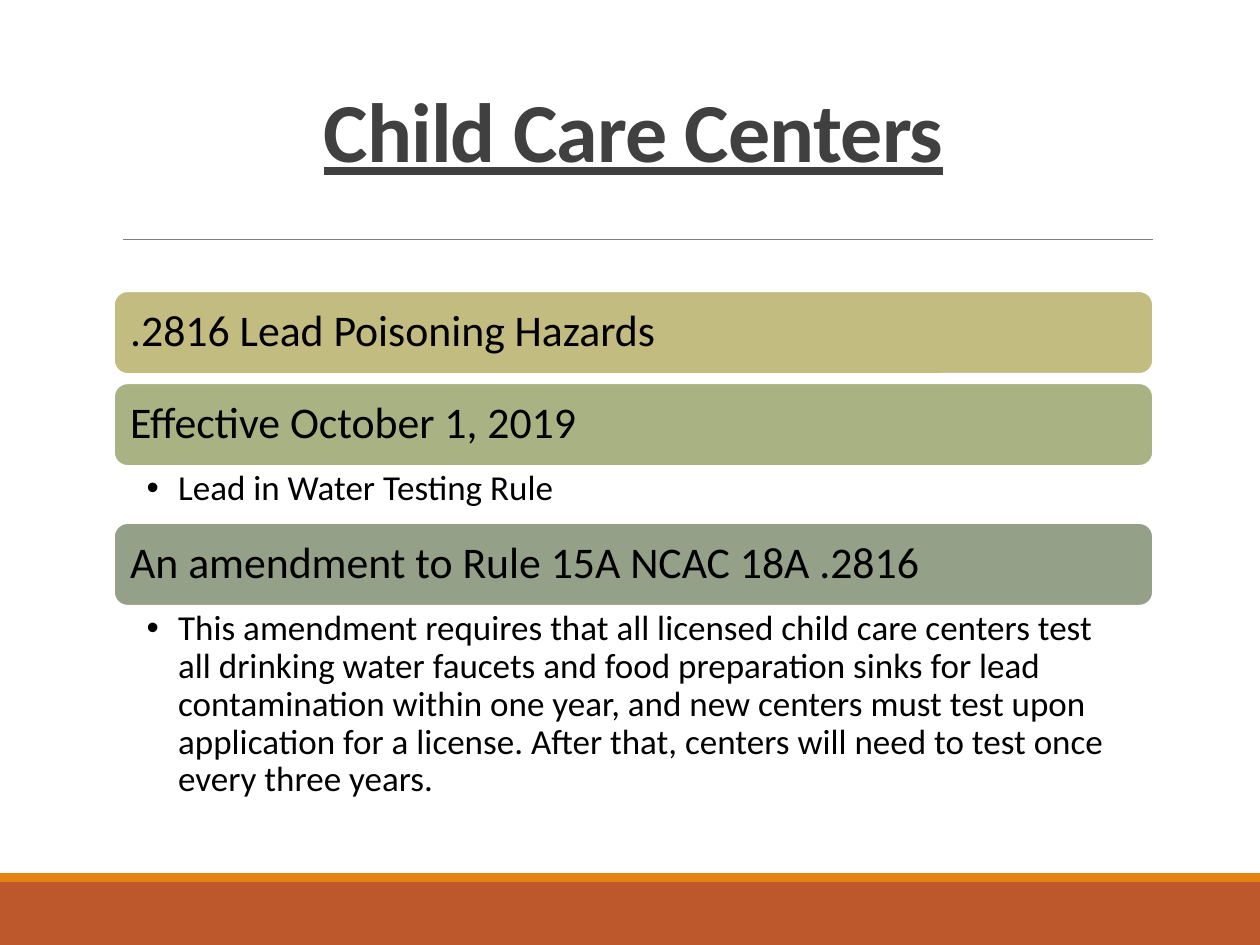
from lxml import etree
from pptx import Presentation
from pptx.dml.color import RGBColor
from pptx.enum import shapes, text
from pptx.oxml import ns
from pptx.util import Pt

WHITE = RGBColor(0xFF, 0xFF, 0xFF)
BLACK = RGBColor(0, 0, 0)
DARK = RGBColor(0x40, 0x40, 0x40)
GRAY = RGBColor(0x80, 0x80, 0x80)
RUST = RGBColor(0xBD, 0x58, 0x2C)
ORANGE = RGBColor(0xE4, 0x83, 0x12)
SAND = RGBColor(0xC2, 0xBC, 0x80)
OLIVE = RGBColor(0xA8, 0xB2, 0x83)
SAGE = RGBColor(0x94, 0xA0, 0x88)

WIDTH, HEIGHT = 720, 540
LEFT, CONTENT_W = 65, 594
BAR_H, GAP = 47.5, 5.1
FIRST_BAR = 166.3

# heading, colour, bullet, height below the bar
SECTIONS = [
    (".2816 Lead Poisoning Hazards", SAND, None, GAP),
    ("Effective October 1, 2019", OLIVE, "Lead in Water Testing Rule", 32.4),
    ("An amendment to Rule 15A NCAC 18A .2816", SAGE,
     "This amendment requires that all licensed child care centers test all "
     "drinking water faucets and food preparation sinks for lead contamination "
     "within one year, and new centers must test upon application for a license. "
     "After that, centers will need to test once every three years.", 116),
]


class Deck:
    font = "Calibri"

    def __init__(self, prs):
        self.s = prs.slides.add_slide(prs.slide_layouts[5])

    def add_text(self, tf, words, size, color, align, spacing):
        p = tf.paragraphs[0]
        p.alignment, p.line_spacing = align, spacing
        r = p.add_run()
        r.text = words
        r.font.name, r.font.size = self.font, Pt(size)
        r.font.color.rgb = color
        return p, r

    def frame(self, sp, anchor, left, top, right, bottom):
        """Set wrapping, anchor and margins, and return the text frame."""
        tf = sp.text_frame
        tf.word_wrap, tf.auto_size = True, text.MSO_AUTO_SIZE.NONE
        tf.vertical_anchor = anchor
        tf.margin_left, tf.margin_top = Pt(left), Pt(top)
        tf.margin_right, tf.margin_bottom = Pt(right), Pt(bottom)
        return tf

    def title(self, words, x, y, w, h):
        sp = self.s.shapes.title
        sp.left, sp.top, sp.width, sp.height = Pt(x), Pt(y), Pt(w), Pt(h)
        tf = self.frame(sp, text.MSO_ANCHOR.BOTTOM, 7.2, 3.6, 7.2, 3.6)
        _, r = self.add_text(tf, words, 48, DARK, text.PP_ALIGN.CENTER, 0.85)
        r.font.bold = r.font.underline = True
        r._r.get_or_add_rPr().set("spc", "-50")

    def block(self, kind, fill, x, y, w, h):
        sp = self.s.shapes.add_shape(kind, Pt(x), Pt(y), Pt(w), Pt(h))
        sp.shadow.inherit = False
        sp.fill.solid()
        sp.fill.fore_color.rgb = fill
        sp.line.fill.background()
        return sp

    def rule(self, x1, x2, y):
        c = self.s.shapes.add_connector(
            shapes.MSO_CONNECTOR.STRAIGHT, Pt(x1), Pt(y), Pt(x2), Pt(y))
        c.line.color.rgb, c.line.width = GRAY, Pt(0.5)
        etree.SubElement(c._element.spPr, ns.qn("a:effectLst"))

    def bar(self, words, fill, y):
        sp = self.block(shapes.MSO_SHAPE.ROUNDED_RECTANGLE, fill,
                        LEFT, y, CONTENT_W, BAR_H)
        sp.line.color.rgb, sp.line.width = WHITE, Pt(1.25)
        tf = self.frame(sp, text.MSO_ANCHOR.MIDDLE, 7.2, 7.2, 7.2, 7.2)
        self.add_text(tf, words, 25, BLACK, text.PP_ALIGN.LEFT, 0.9)

    def bullet(self, words, y, h):
        sp = self.s.shapes.add_textbox(Pt(LEFT), Pt(y), Pt(CONTENT_W), Pt(h))
        tf = self.frame(sp, text.MSO_ANCHOR.TOP, 18.8, 2.5, 14, 2.5)
        p, _ = self.add_text(tf, words, 20, BLACK, text.PP_ALIGN.LEFT, 0.9)
        pPr = p._p.get_or_add_pPr()
        pPr.set("marL", str(Pt(18)))
        pPr.set("indent", str(-Pt(18)))
        etree.SubElement(pPr, ns.qn("a:buFont")).set("typeface", "Arial")
        etree.SubElement(pPr, ns.qn("a:buChar")).set("char", "•")


def main():
    prs = Presentation()
    prs.slide_width, prs.slide_height = Pt(WIDTH), Pt(HEIGHT)
    deck = Deck(prs)
    deck.block(shapes.MSO_SHAPE.RECTANGLE, RUST, 0, 504, WIDTH, 36)
    deck.block(shapes.MSO_SHAPE.RECTANGLE, ORANGE, 0, 499, WIDTH, 5)
    deck.rule(70.5, 659, 136.8)
    deck.title("Child Care Centers", LEFT, 36, CONTENT_W, 70.5)

    y = FIRST_BAR
    for heading, fill, detail, below in SECTIONS:
        deck.bar(heading, fill, y)
        y += BAR_H
        if detail:
            deck.bullet(detail, y, below)
        y += below
    prs.save("out.pptx")


if __name__ == "__main__":
    main()
